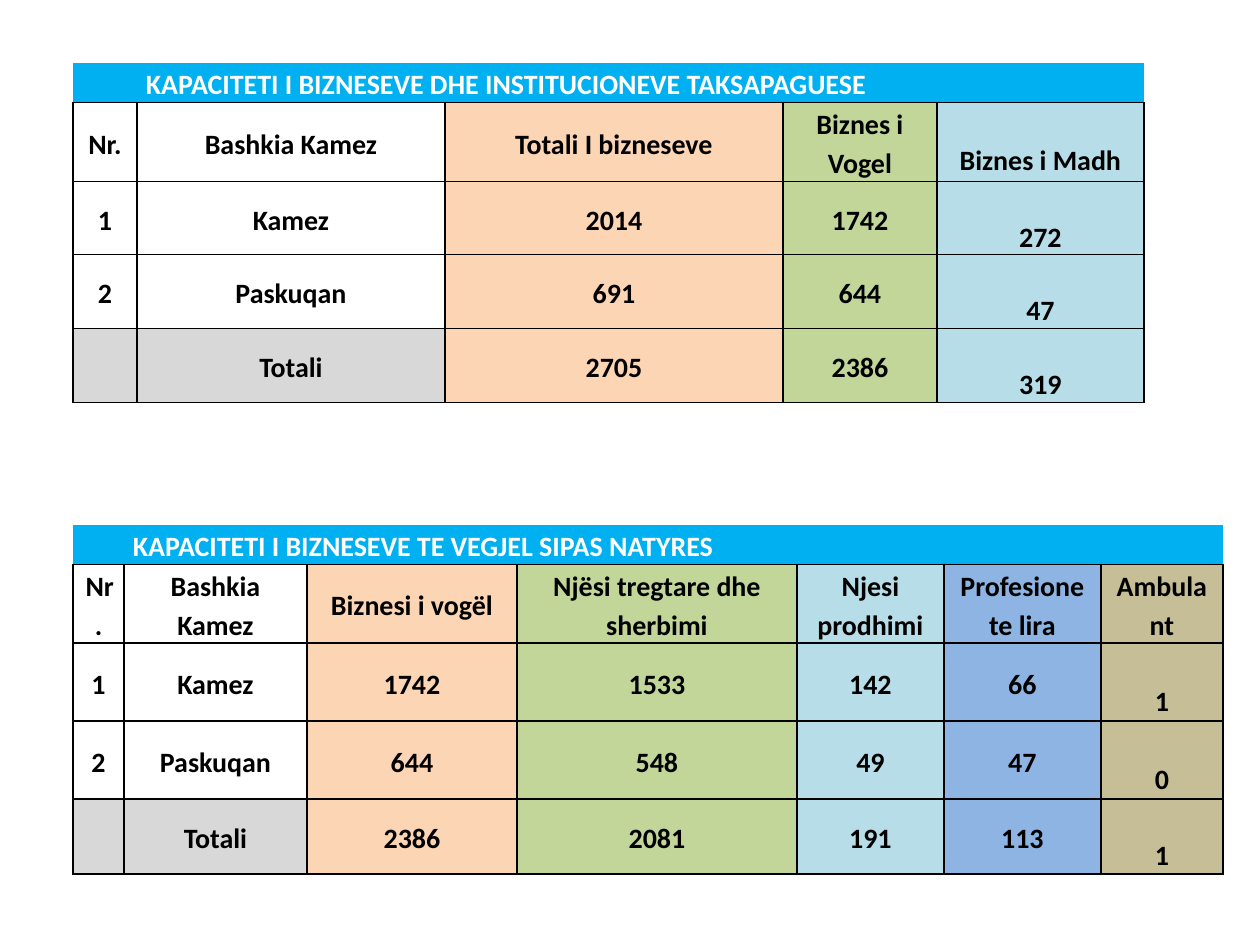
from lxml.etree import SubElement as Sub
from pptx import Presentation
from pptx.dml.color import RGBColor as RGB
from pptx.enum.text import MSO_ANCHOR as ANCHOR, PP_ALIGN as ALIGN
from pptx.oxml.ns import qn
from pptx.util import Pt

PX = 914400 // 126
BLACK = RGB(0x00, 0x00, 0x00)
WHITE = RGB(0xFF, 0xFF, 0xFF)
CYAN = RGB(0x00, 0xB0, 0xF0)
GRAY = RGB(0xD8, 0xD8, 0xD8)
PEACH = RGB(0xFC, 0xD5, 0xB4)
GREEN = RGB(0xC2, 0xD6, 0x9A)
AQUA = RGB(0xB6, 0xDD, 0xE8)
BLUE = RGB(0x8D, 0xB4, 0xE3)
TAN = RGB(0xC5, 0xBE, 0x97)
FONT = {"name": "Calibri", "size": Pt(16), "bold": True}
INSET = {"margin_left": 9 * PX, "margin_right": 9 * PX,
         "margin_top": 0, "margin_bottom": 0}
PLAIN = {"first_row": False, "horz_banding": False}
DROP = 34 * PX

TABLES = [
    {
        "top": 63,
        "title": "KAPACITETI I BIZNESEVE DHE INSTITUCIONEVE TAKSAPAGUESE",
        "cols": [64, 308, 338, 154, 207],
        "rows": [39, 79, 73, 74, 74],
        "fills": [None, None, PEACH, GREEN, AQUA],
        "low": 1,
        "data": [
            ["Nr.", "Bashkia Kamez", "Totali I bizneseve",
             "Biznes i Vogel", "Biznes i Madh"],
            ["1", "Kamez", "2014", "1742", "272"],
            ["2", "Paskuqan", "691", "644", "47"],
            ["", "Totali", "2705", "2386", "319"],
        ],
    },
    {
        "top": 525,
        "title": "KAPACITETI I BIZNESEVE TE VEGJEL SIPAS NATYRES",
        "cols": [51, 183, 210, 280, 147, 157, 122],
        "rows": [39, 78, 78, 78, 75],
        "fills": [None, None, PEACH, GREEN, AQUA, BLUE, TAN],
        "low": 2,
        "data": [
            ["Nr.", "Bashkia Kamez", "Biznesi i vogël",
             "Njësi tregtare dhe sherbimi", "Njesi prodhimi",
             "Profesione te lira", "Ambulant"],
            ["1", "Kamez", "1742", "1533", "142", "66", "1"],
            ["2", "Paskuqan", "644", "548", "49", "47", "0"],
            ["", "Totali", "2386", "2081", "191", "113", "1"],
        ],
    },
]


def style(cell, fill, lined):
    for key, val in INSET.items():
        setattr(cell, key, val)
    props = cell._tc.get_or_add_tcPr()
    for side in "LRTB":
        line = Sub(props, qn(f"a:ln{side}"), w=str(Pt(1)))
        if side in lined:
            paint = Sub(line, qn("a:solidFill"))
            Sub(paint, qn("a:srgbClr"), val=str(BLACK))
        else:
            Sub(line, qn("a:noFill"))
    if fill is None:
        cell.fill.background()
    else:
        cell.fill.solid()
        cell.fill.fore_color.rgb = fill


def write(cell, text, color, align, anchor):
    cell.vertical_anchor = anchor
    para = cell.text_frame.paragraphs[0]
    para.alignment = align
    para.line_spacing = 1.15
    run = para.add_run()
    run.text = text
    for key, val in FONT.items():
        setattr(run.font, key, val)
    run.font.color.rgb = color


deck = Presentation()
deck.slide_width, deck.slide_height = 1260 * PX, 945 * PX
slide = deck.slides.add_slide(deck.slide_layouts[6])

for info in TABLES:
    cols, rows = info["cols"], info["rows"]
    frame = slide.shapes.add_table(
        len(rows), len(cols), 73 * PX, info["top"] * PX,
        sum(cols) * PX, sum(rows) * PX)
    table = frame.table
    for key, val in PLAIN.items():
        setattr(table, key, val)
    for col, wide in zip(table.columns, cols):
        col.width = wide * PX
    for row, high in zip(table.rows, rows):
        row.height = high * PX

    for c in range(len(cols)):
        style(table.cell(0, c), CYAN, "B")
    head = table.cell(0, 1)
    head.merge(table.cell(0, 3))
    write(head, info["title"], WHITE, ALIGN.LEFT, ANCHOR.BOTTOM)

    for r, line in enumerate(info["data"], 1):
        for c, text in enumerate(line):
            cell = table.cell(r, c)
            total = r == len(info["data"]) and c < 2
            style(cell, GRAY if total else info["fills"][c], "LRTB")
            if text:
                write(cell, text, BLACK, ALIGN.CENTER, ANCHOR.MIDDLE)
            if c == len(cols) - 1 and r >= info["low"]:
                cell.margin_top = DROP

deck.save("out.pptx")
